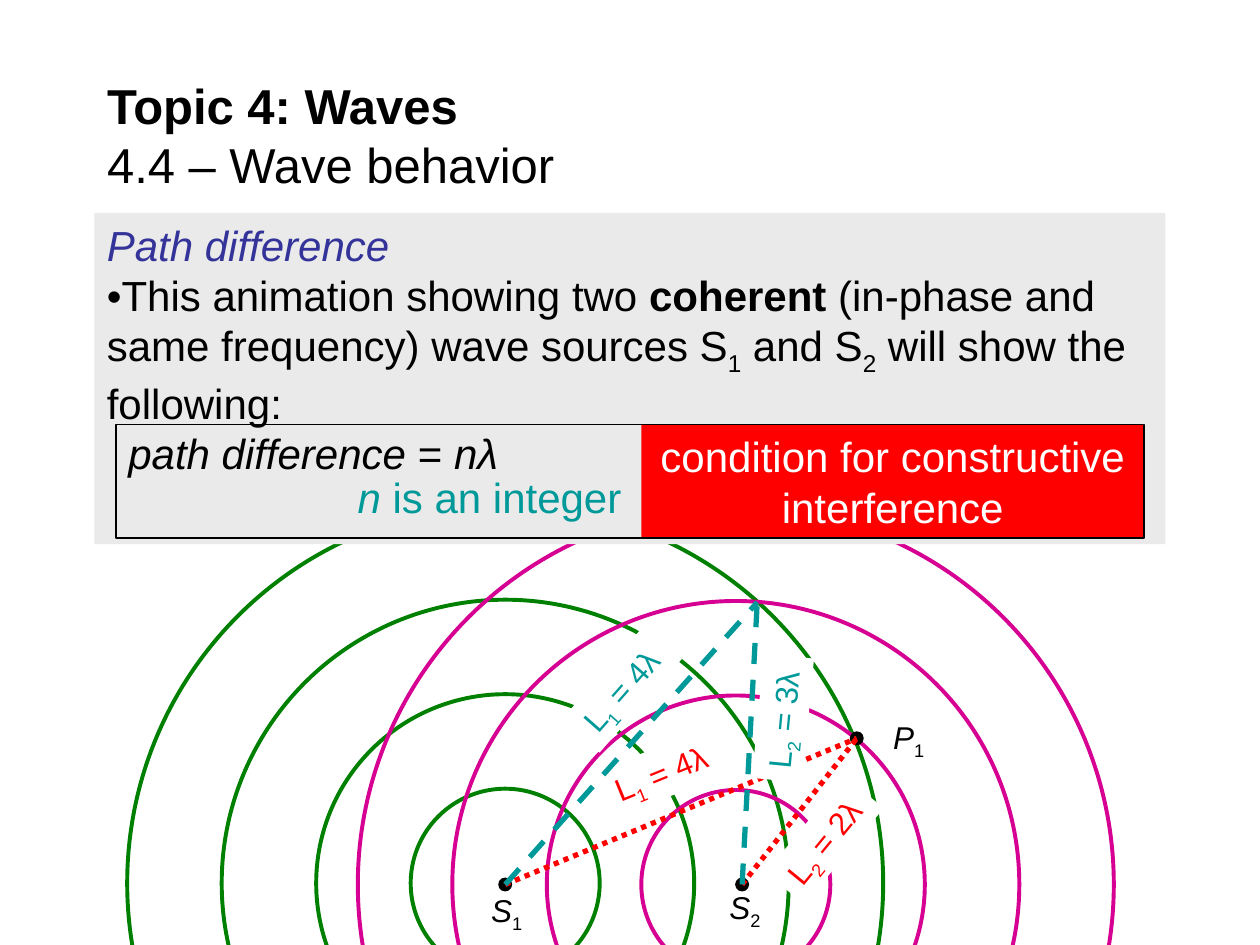
from pptx import Presentation
from pptx.dml.color import RGBColor
from pptx.enum.dml import MSO_LINE
from pptx.enum.shapes import MSO_CONNECTOR, MSO_SHAPE
from pptx.enum.text import MSO_ANCHOR, PP_ALIGN
from pptx.oxml.ns import qn
from pptx.util import Inches, Pt
from lxml import etree

BLACK = RGBColor(0x00, 0x00, 0x00)
WHITE = RGBColor(0xFF, 0xFF, 0xFF)
GREEN = RGBColor(0x00, 0x80, 0x00)
MAGENTA = RGBColor(0xD6, 0x00, 0x93)
RED = RGBColor(0xFF, 0x00, 0x00)
TEAL = RGBColor(0x00, 0x99, 0x99)
NAVY = RGBColor(0x33, 0x33, 0x99)
GRAY = RGBColor(0xEA, 0xEA, 0xEA)

FONT = "Arial"
WAVELENGTH = 0.75


def add_run(paragraph, text, size, color, bold=False, italic=False, subscript=False):
    run = paragraph.add_run()
    run.text = text
    font = run.font
    font.name, font.size, font.bold, font.italic = FONT, Pt(size), bold, italic
    font.color.rgb = color
    if subscript:
        run._r.get_or_add_rPr().set("baseline", "-25000")


def add_box(slide, box, fill=None, line=None, width=0.75, kind=MSO_SHAPE.RECTANGLE):
    shape = slide.shapes.add_shape(kind, *map(Inches, box))
    shape.shadow.inherit = False
    if fill is None:
        shape.fill.background()
    else:
        shape.fill.solid()
        shape.fill.fore_color.rgb = fill
    if line is None:
        shape.line.fill.background()
    else:
        shape.line.color.rgb = line
        shape.line.width = Pt(width)
    frame = shape.text_frame
    frame.vertical_anchor = MSO_ANCHOR.TOP
    frame.paragraphs[0].alignment = PP_ALIGN.LEFT
    return shape


def add_circle(slide, center, radius, fill, line, width):
    x, y = center
    box = (x - radius, y - radius, 2 * radius, 2 * radius)
    add_box(slide, box, fill, line, width, MSO_SHAPE.OVAL)


def add_waves(slide, center, color):
    for count in range(1, 5):
        add_circle(slide, center, count * WAVELENGTH, None, color, 2.25)


def add_point(slide, center, letter, index, label_at):
    add_circle(slide, center, 0.05, BLACK, BLACK, 0.75)
    label = slide.shapes.add_textbox(*map(Inches, (*label_at, 0.46, 0.4)))
    label.text_frame.word_wrap = False
    paragraph = label.text_frame.paragraphs[0]
    add_run(paragraph, letter, 18, BLACK, italic=True)
    add_run(paragraph, index, 18, BLACK, subscript=True)


def add_ray(slide, start, end, color, dash, index, length, label_at, rotation):
    ray = slide.shapes.add_connector(MSO_CONNECTOR.STRAIGHT, *map(Inches, (*start, *end)))
    ray.line.color.rgb = color
    ray.line.width = Pt(3)
    ray.line.dash_style = dash
    etree.SubElement(ray._element.spPr, qn("a:effectLst"))
    return lambda: add_ray_label(slide, color, index, length, label_at, rotation)


def add_ray_label(slide, color, index, length, label_at, rotation):
    label = add_box(slide, (*label_at, 0.99, 0.4), WHITE)
    label.rotation = rotation
    label.text_frame.word_wrap = False
    paragraph = label.text_frame.paragraphs[0]
    add_run(paragraph, "L", 18, color)
    add_run(paragraph, index, 18, color, subscript=True)
    add_run(paragraph, f" = {length}λ", 18, color)


def add_interference(slide):
    source_1, source_2 = (4.01, 7.02), (5.89, 7.02)
    p_1, crossing = (6.8, 5.86), (6.01, 4.78)
    add_waves(slide, (4.01, 7.01), GREEN)
    add_waves(slide, (5.84, 7.02), MAGENTA)
    add_point(slide, source_1, "S", "1", (3.8, 7.02))
    add_point(slide, source_2, "S", "2", (5.69, 7))
    add_point(slide, p_1, "P", "1", (6.99, 5.65))

    dots, dashes = MSO_LINE.ROUND_DOT, MSO_LINE.DASH
    red_1 = add_ray(slide, source_1, p_1, RED, dots, "1", 4, (4.76, 5.93), 337.8)
    red_1()
    red_2 = add_ray(slide, source_2, p_1, RED, dots, "2", 2, (6.05, 6.47), 309.3)
    red_2()
    teal_1 = add_ray(slide, source_1, crossing, TEAL, dashes, "1", 4, (4.44, 5.27), 311.3)
    teal_2 = add_ray(slide, source_2, crossing, TEAL, dashes, "2", 3, (5.72, 5.5), 275.5)
    teal_1()
    teal_2()


def add_title(slide, box):
    title = slide.shapes.title
    title.left, title.top, title.width, title.height = map(Inches, box)
    frame = title.text_frame
    frame.text = "Topic 4: Waves\v4.4 – Wave behavior"
    frame.vertical_anchor = MSO_ANCHOR.MIDDLE
    heading = frame.paragraphs[0]
    heading.alignment = PP_ALIGN.LEFT
    for run, bold in zip(heading.runs, (True, False)):
        run.font.name, run.font.size, run.font.bold = FONT, Pt(28), bold
        run.font.color.rgb = BLACK


def add_explanation(slide, box):
    frame = add_box(slide, box, GRAY).text_frame
    frame.word_wrap = True
    add_run(frame.paragraphs[0], "Path difference", 24, NAVY, italic=True)
    body = frame.add_paragraph()
    body.alignment = PP_ALIGN.LEFT
    add_run(body, "•This animation showing two ", 24, BLACK)
    add_run(body, "coherent", 24, BLACK, bold=True)
    add_run(body, " (in-phase and same frequency) wave sources S", 24, BLACK)
    add_run(body, "1", 24, BLACK, subscript=True)
    add_run(body, " and S", 24, BLACK)
    add_run(body, "2", 24, BLACK, subscript=True)
    add_run(body, " will show the following:", 24, BLACK)


def add_formula_line(slide, box, color, parts):
    line = slide.shapes.add_textbox(*map(Inches, box))
    line.text_frame.word_wrap = True
    paragraph = line.text_frame.paragraphs[0]
    paragraph.line_spacing = 0.9
    for text, italic in parts:
        add_run(paragraph, text, 24, color, italic=italic)


def add_condition(slide, box):
    left, top, width, height = box
    split = 4.17
    add_formula_line(slide, (left, top + 0.02, 3.55, 0.32), BLACK,
                     [("path difference", True), (" = ", False), ("nλ", True)])
    condition = add_box(slide, (left + split, top, width - split, height), RED)
    condition.text_frame.word_wrap = True
    paragraph = condition.text_frame.paragraphs[0]
    paragraph.alignment = PP_ALIGN.CENTER
    add_run(paragraph, "condition for constructive interference", 24, WHITE)
    add_box(slide, box, None, BLACK, 1)
    add_formula_line(slide, (left + 1.82, top + 0.37, 2.5, 0.32), TEAL,
                     [("n", True), (" is an integer", False)])


def main():
    deck = Presentation()
    deck.slide_width, deck.slide_height = Inches(10), Inches(7.5)
    slide = deck.slides.add_slide(deck.slide_layouts[5])
    add_title(slide, (0.75, 0.58, 8.5, 0.98))
    add_interference(slide)
    add_explanation(slide, (0.75, 1.69, 8.5, 2.63))
    add_condition(slide, (0.92, 3.37, 8.16, 0.9))
    deck.save("out.pptx")


if __name__ == "__main__":
    main()
